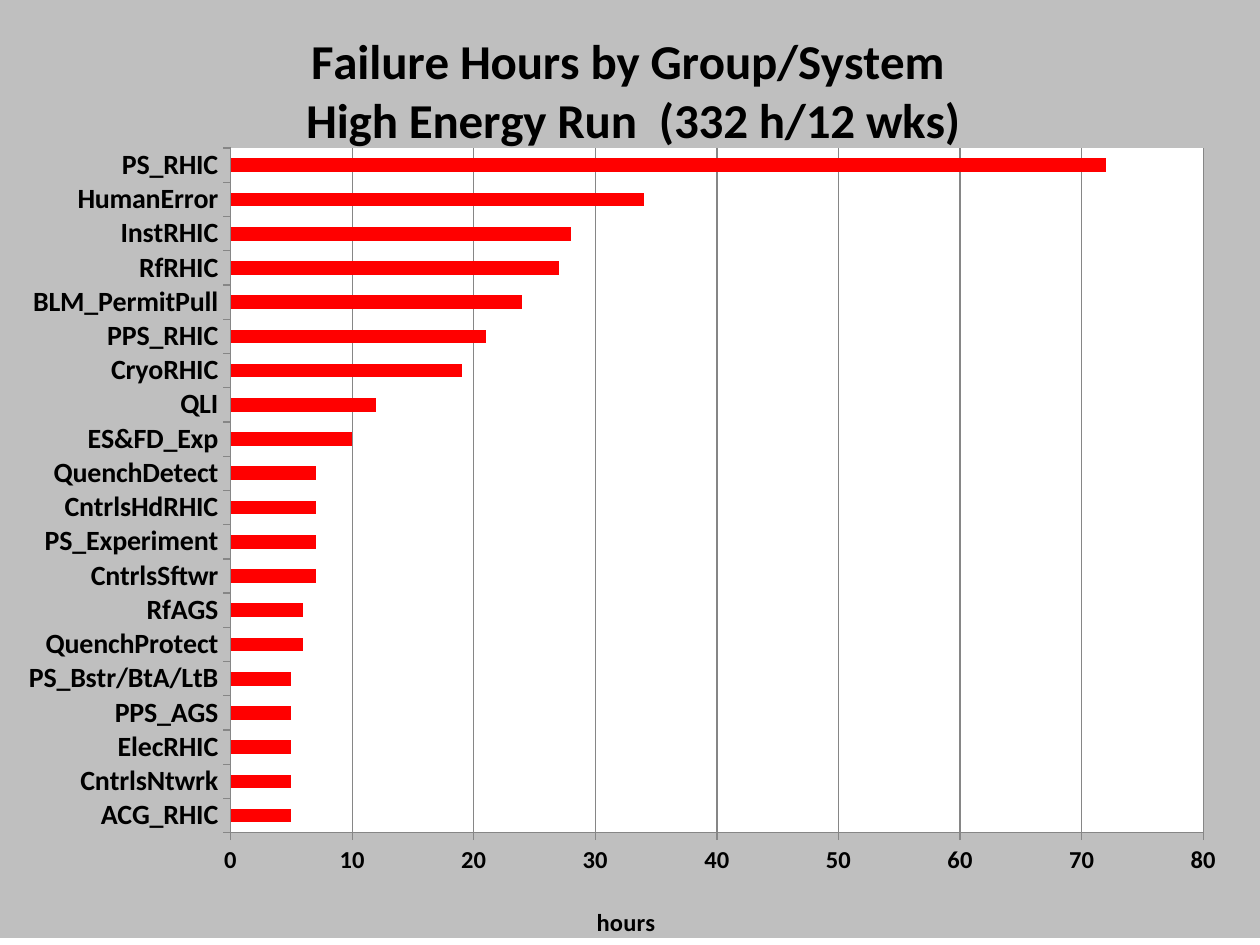
from lxml.etree import SubElement
from pptx import Presentation
from pptx.chart.data import CategoryChartData
from pptx.dml.color import RGBColor
from pptx.enum.chart import XL_CHART_TYPE, XL_TICK_MARK
from pptx.oxml import parse_xml
from pptx.oxml.ns import nsdecls, qn
from pptx.util import Pt

FAILURE_HOURS = {
    "ACG_RHIC": 5,
    "CntrlsNtwrk": 5,
    "ElecRHIC": 5,
    "PPS_AGS": 5,
    "PS_Bstr/BtA/LtB": 5,
    "QuenchProtect": 6,
    "RfAGS": 6,
    "CntrlsSftwr": 7,
    "PS_Experiment": 7,
    "CntrlsHdRHIC": 7,
    "QuenchDetect": 7,
    "ES&FD_Exp": 10,
    "QLI": 12,
    "CryoRHIC": 19,
    "PPS_RHIC": 21,
    "BLM_PermitPull": 24,
    "RfRHIC": 27,
    "InstRHIC": 28,
    "HumanError": 34,
    "PS_RHIC": 72,
}


def color(value):
    return RGBColor.from_string(value)


class ChartSlide:
    font_name = "Calibri"
    text_color = "000000"
    line_color = "868686"
    background = "BFBFBF"
    plot_fill = "FFFFFF"
    bar_color = "FF0000"

    def __init__(self, deck):
        self.deck = deck
        self.slide = deck.slides.add_slide(deck.slide_layouts[6])

    def style_font(self, font, size, bold=True):
        font.name = self.font_name
        font.size = Pt(size)
        font.bold = bold
        font.color.rgb = color(self.text_color)

    def fill_xml(self, value):
        return parse_xml(
            f'<c:spPr {nsdecls("c", "a")}><a:solidFill><a:srgbClr val="{value}"/>'
            "</a:solidFill><a:ln><a:noFill/></a:ln></c:spPr>"
        )

    def place(self, element, **position):
        for old in element.findall(qn("c:layout")):
            element.remove(old)
        layout = parse_xml(f'<c:layout {nsdecls("c")}><c:manualLayout/></c:layout>')
        for tag, value in position.items():
            SubElement(layout[0], qn(f"c:{tag}")).set("val", str(value))
        text = element.find(qn("c:tx"))
        element.insert(0 if text is None else 1, layout)

    def add_title(self, owner, text, size, x, y):
        owner.has_title = True
        title = owner.chart_title if hasattr(owner, "chart_title") else owner.axis_title
        title.text_frame.text = text
        for para in title.text_frame.paragraphs:
            for span in para.runs:
                self.style_font(span.font, size)
        self.place(title._element, xMode="edge", yMode="edge", x=x, y=y)

    def style_axis(self, axis, size):
        self.style_font(axis.tick_labels.font, size)
        axis.major_tick_mark = XL_TICK_MARK.CROSS if size == 0 else XL_TICK_MARK.OUTSIDE
        axis.minor_tick_mark = XL_TICK_MARK.NONE
        axis.format.line.color.rgb = color(self.line_color)

    def add_bar_chart(self, values):
        data = CategoryChartData(number_format="0")
        data.categories = list(values)
        data.add_series("Series 1", list(values.values()))
        frame = self.slide.shapes.add_chart(
            XL_CHART_TYPE.BAR_CLUSTERED, 0, 0,
            self.deck.slide_width, self.deck.slide_height, data,
        )
        chart = frame.chart
        self.style_font(chart.font, 10, bold=False)
        chart.has_legend = False

        plot = chart.plots[0]
        plot.gap_width = 150
        plot.vary_by_categories = False
        fill = plot.series[0].format.fill
        fill.solid()
        fill.fore_color.rgb = color(self.bar_color)

        self.style_axis(chart.category_axis, 16)
        chart.category_axis.has_major_gridlines = False
        hours_axis = chart.value_axis
        self.style_axis(hours_axis, 14)
        hours_axis.minimum_scale = 0
        hours_axis.maximum_scale = 80
        hours_axis.major_unit = 10
        hours_axis.tick_labels.number_format = "0"
        hours_axis.tick_labels.number_format_is_linked = False
        hours_axis.has_major_gridlines = True
        hours_axis.major_gridlines.format.line.color.rgb = color(self.line_color)

        chart_element = chart._chartSpace.find(qn("c:chart"))
        chart_element.addnext(self.fill_xml(self.background))
        plot_area = chart_element.find(qn("c:plotArea"))
        plot_area.append(self.fill_xml(self.plot_fill))
        self.place(
            plot_area, layoutTarget="inner", xMode="edge", yMode="edge",
            x=0.183, y=0.158, w=0.772, h=0.73,
        )
        return chart


def main():
    deck = Presentation()
    deck.slide_width = Pt(720)
    deck.slide_height = Pt(540)
    page = ChartSlide(deck)
    chart = page.add_bar_chart(FAILURE_HOURS)
    page.add_title(
        chart,
        "Failure Hours by Group/System \nHigh Energy Run  (332 h/12 wks)",
        28, 0.24, 0.03,
    )
    page.add_title(chart.value_axis, "hours", 14, 0.47, 0.96)
    deck.save("out.pptx")


if __name__ == "__main__":
    main()
